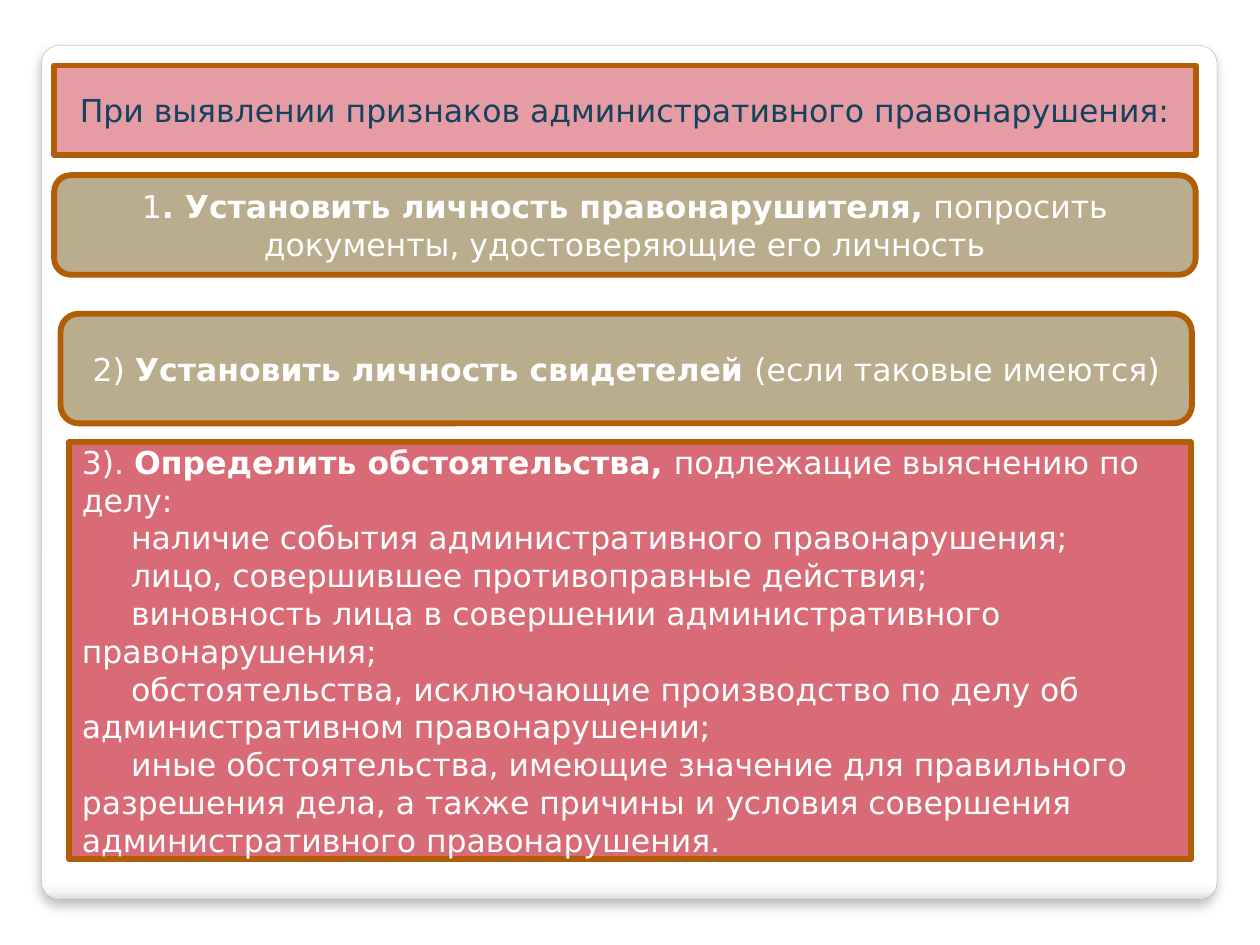
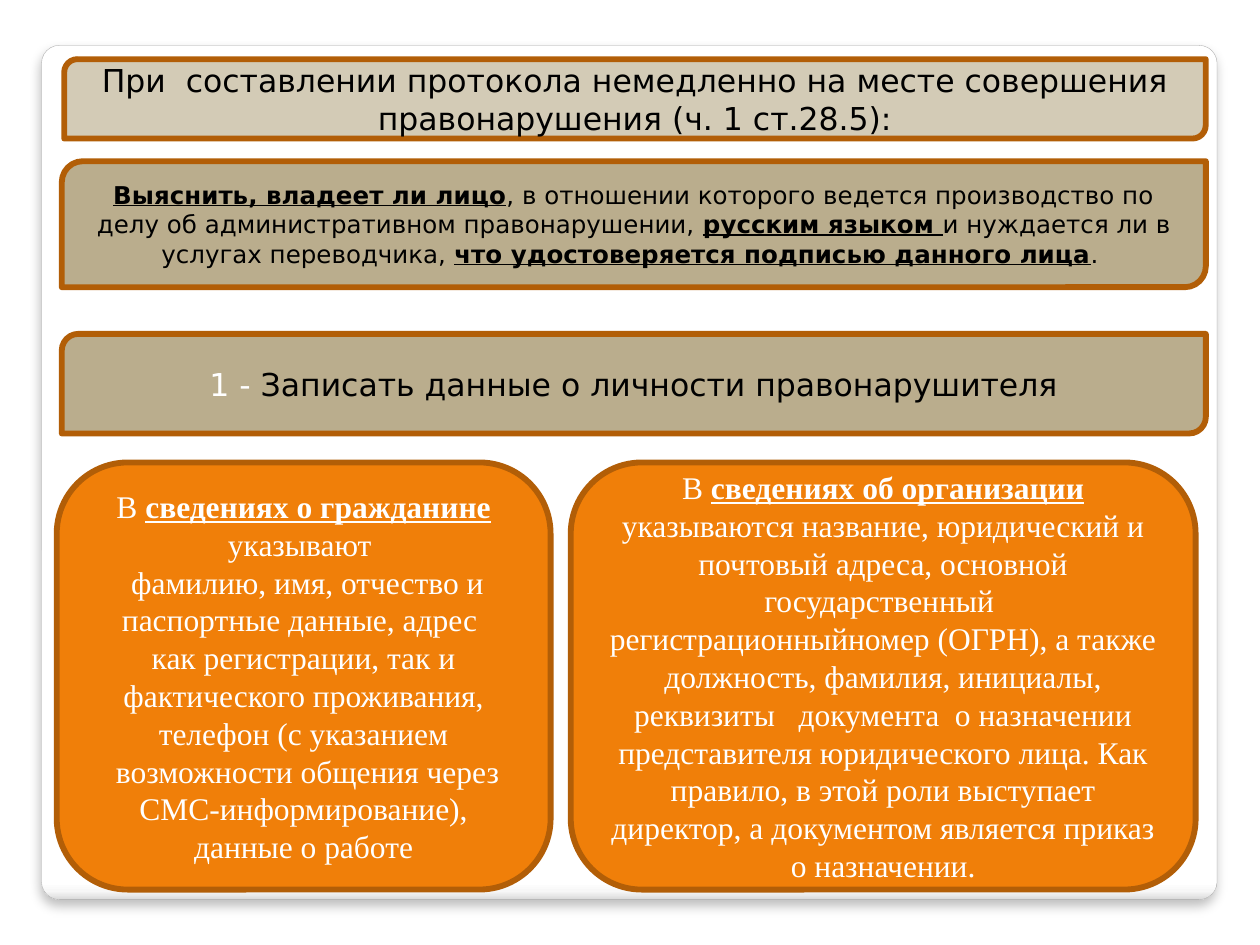
from lxml import etree
from pptx import Presentation
from pptx import util as u
from pptx.dml.color import RGBColor
from pptx.enum import shapes, text
from pptx.oxml import ns, parse_xml

WHITE = RGBColor(0xFF, 0xFF, 0xFF)
BLACK = RGBColor(0x00, 0x00, 0x00)
NAVY = RGBColor(0x14, 0x42, 0x5D)
PINK = RGBColor(0xE6, 0x9C, 0xA4)
ROSE = RGBColor(0xD9, 0x6B, 0x77)
SAND = RGBColor(0xBA, 0xAD, 0x8D)
PALE_SAND = RGBColor(0xD3, 0xCB, 0xB6)
ORANGE = RGBColor(0xF0, 0x7F, 0x09)
BROWN = RGBColor(0xB2, 0x5E, 0x07)
GREY = RGBColor(0xA4, 0xA4, 0xA4)

SANS = "DejaVu Sans"
SERIF = "Times New Roman"
BOLD = {"bold": True}
KEY = {"bold": True, "underline": True}

RECT = shapes.MSO_SHAPE.RECTANGLE
ROUND = shapes.MSO_SHAPE.ROUNDED_RECTANGLE
ALTERNATE = shapes.MSO_SHAPE.FLOWCHART_ALTERNATE_PROCESS
DIAGONAL = shapes.MSO_SHAPE.ROUND_2_DIAG_RECTANGLE

PANEL_PLACE = (0.33, 0.36, 9.33, 6.78)
PANEL_STOPS = ((0, "FFFFFF"), (98, "FFFFFF"), (99, "F7F7F7"), (100, "DADADA"))

SLIDES = [
    {
        "layout": "Title and Content",
        "boxes": [
            {"role": "title", "place": (0.43, 0.52, 9.06, 0.71), "kind": RECT,
             "fill": PINK, "color": NAVY,
             "paras": [["При выявлении признаков административного правонарушения:"]]},
            {"place": (0.43, 1.39, 9.06, 0.79), "kind": ROUND, "fill": SAND,
             "paras": [["1", (". Установить личность правонарушителя,", BOLD),
                        " попросить документы, удостоверяющие его личность"]]},
            {"place": (0.48, 2.49, 8.98, 0.87), "kind": ALTERNATE, "fill": SAND,
             "paras": [["2) ", ("Установить личность свидетелей ", BOLD),
                        "(если таковые имеются)"]]},
            {"role": "body", "place": (0.55, 3.51, 8.9, 3.31), "kind": RECT,
             "fill": ROSE, "align": text.PP_ALIGN.LEFT, "indent": 0.39,
             "paras": [
                 ["3). ", ("Определить обстоятельства, ", BOLD),
                  "подлежащие выяснению по делу:"],
                 ["наличие события административного правонарушения;"],
                 ["лицо, совершившее противоправные действия;"],
                 ["виновность лица в совершении административного правонарушения;"],
                 ["обстоятельства, исключающие производство по делу об "
                  "административном правонарушении;"],
                 ["иные обстоятельства, имеющие значение для правильного разрешения "
                  "дела, а также причины и условия совершения административного "
                  "правонарушения."]]},
        ],
    },
    {
        "layout": "Title Only",
        "boxes": [
            {"role": "title", "place": (0.51, 0.47, 9.06, 0.63), "kind": DIAGONAL,
             "fill": PALE_SAND, "color": BLACK,
             "paras": [["При  составлении протокола немедленно на месте совершения "
                        "правонарушения (ч. 1 ст.28.5):"]]},
            {"place": (0.49, 1.28, 9.08, 1), "kind": DIAGONAL, "fill": SAND,
             "color": BLACK, "size": 14,
             "paras": [[("Выяснить, владеет ли лицо", KEY),
                        ", в отношении которого ведется производство по делу об "
                        "административном правонарушении, ",
                        ("русским языком ", KEY),
                        "и нуждается ли в услугах переводчика, ",
                        ("что удостоверяется подписью данного лица", KEY), ". "]]},
            {"place": (0.49, 2.65, 9.08, 0.79), "kind": DIAGONAL, "fill": SAND,
             "paras": [["1 - ", ("Записать данные о личности правонарушителя",
                                 {"color": BLACK})]]},
            {"place": (0.45, 3.67, 3.92, 3.39), "kind": ROUND, "fill": ORANGE,
             "font": SERIF,
             "paras": [
                 ["В ", ("сведениях о гражданине", KEY), " указывают "],
                 [" фамилию, имя, отчество и паспортные данные, адрес "],
                 ["как регистрации, так и фактического проживания, телефон (с указанием"],
                 [" возможности общения через СМС-информирование), данные о работе"]]},
            {"place": (4.53, 3.67, 4.96, 3.39), "kind": ROUND, "fill": ORANGE,
             "font": SERIF,
             "paras": [["В ", ("сведениях об организации", KEY),
                        " указываются название, юридический и почтовый адреса, основной "
                        "государственный  регистрационныйномер (ОГРН), а также должность, "
                        "фамилия, инициалы, реквизиты   документа  о назначении "
                        "представителя юридического лица. Как правило, в этой роли "
                        "выступает директор, а документом является приказ о назначении."]]},
        ],
    },
]


def write_span(para, content, *, font, size, color, bold=False, underline=False):
    span = para.add_run()
    span.text = content
    span.font.name = font
    span.font.size = u.Pt(size)
    span.font.color.rgb = color
    span.font.bold = bold
    span.font.underline = underline


def write_paras(frame, paras, *, font=SANS, size=18, color=WHITE,
                align=text.PP_ALIGN.CENTER, indent=0):
    frame.word_wrap = True
    frame.auto_size = text.MSO_AUTO_SIZE.NONE
    frame.vertical_anchor = text.MSO_ANCHOR.MIDDLE
    for number, spans in enumerate(paras):
        para = frame.add_paragraph() if number else frame.paragraphs[0]
        para.alignment = align
        para.space_before = u.Pt(0)
        properties = para._p.get_or_add_pPr()
        properties.set("marL", "0")
        properties.set("indent", str(u.Inches(indent if number else 0)))
        etree.SubElement(properties, ns.qn("a:buNone"))
        for span in spans:
            content, extra = (span, {}) if isinstance(span, str) else span
            write_span(para, content, **{"font": font, "size": size, "color": color, **extra})


def paint(box, fill):
    box.fill.solid()
    box.fill.fore_color.rgb = fill
    box.line.color.rgb = BROWN
    box.line.width = u.Pt(3.35)


def add_plate(page, kind, place):
    plate = page.shapes.add_shape(kind, *place)
    plate.shadow.inherit = False
    return plate


def draw_box(page, *, place, kind, fill, paras, role=None, **style):
    place = [u.Inches(length) for length in place]
    if role:
        box = page.shapes.title if role == "title" else page.placeholders[1]
        box.left, box.top, box.width, box.height = place
    else:
        box = add_plate(page, kind, place)
    if role and kind != RECT:
        plate = add_plate(page, kind, place)
        page.shapes._spTree.insert(2, plate._element)
        paint(plate, fill)
    else:
        paint(box, fill)
    write_paras(box.text_frame, paras, **style)


def add_master_panel(deck, page):
    panel = page.shapes.add_shape(ROUND, *[u.Inches(length) for length in PANEL_PLACE])
    panel.adjustments[0] = 0.021
    panel.line.color.rgb = GREY
    panel.line.width = u.Pt(0.16)
    stops = "".join(f'<a:gs pos="{position * 1000}"><a:srgbClr val="{color}"/></a:gs>'
                    for position, color in PANEL_STOPS)
    gradient = parse_xml(f'<a:gradFill {ns.nsdecls("a")}><a:gsLst>{stops}</a:gsLst>'
                         '<a:lin ang="5400000" scaled="0"/></a:gradFill>')
    shadow = parse_xml(f'<a:effectLst {ns.nsdecls("a")}><a:outerShdw blurRad="{u.Pt(6)}" '
                       f'dist="{u.Pt(4)}" dir="5400000" algn="t" rotWithShape="0">'
                       '<a:srgbClr val="000000"><a:alpha val="25000"/></a:srgbClr>'
                       '</a:outerShdw></a:effectLst>')
    properties = panel._element.spPr
    properties.find(ns.qn("a:prstGeom")).addnext(gradient)
    properties.append(shadow)
    panel._element.nvSpPr.cNvPr.set("id", "99")
    deck.slide_master.shapes._spTree.insert(2, panel._element)


def trim_template(deck):
    used = [content["layout"] for content in SLIDES]
    for layout in list(deck.slide_layouts):
        if layout.name not in used:
            deck.slide_layouts.remove(layout)
    footers = (shapes.PP_PLACEHOLDER.DATE, shapes.PP_PLACEHOLDER.FOOTER,
               shapes.PP_PLACEHOLDER.SLIDE_NUMBER)
    for base in (deck.slide_master, *deck.slide_layouts):
        for holder in list(base.placeholders):
            if holder.placeholder_format.type in footers:
                base.shapes._spTree.remove(holder._element)


def main():
    deck = Presentation()
    deck.slide_width, deck.slide_height = u.Inches(10), u.Inches(7.5)
    trim_template(deck)
    for number, content in enumerate(SLIDES):
        page = deck.slides.add_slide(deck.slide_layouts.get_by_name(content["layout"]))
        if number == 0:
            add_master_panel(deck, page)
        for box in content["boxes"]:
            draw_box(page, **box)
    deck.save("out.pptx")


if __name__ == "__main__":
    main()
